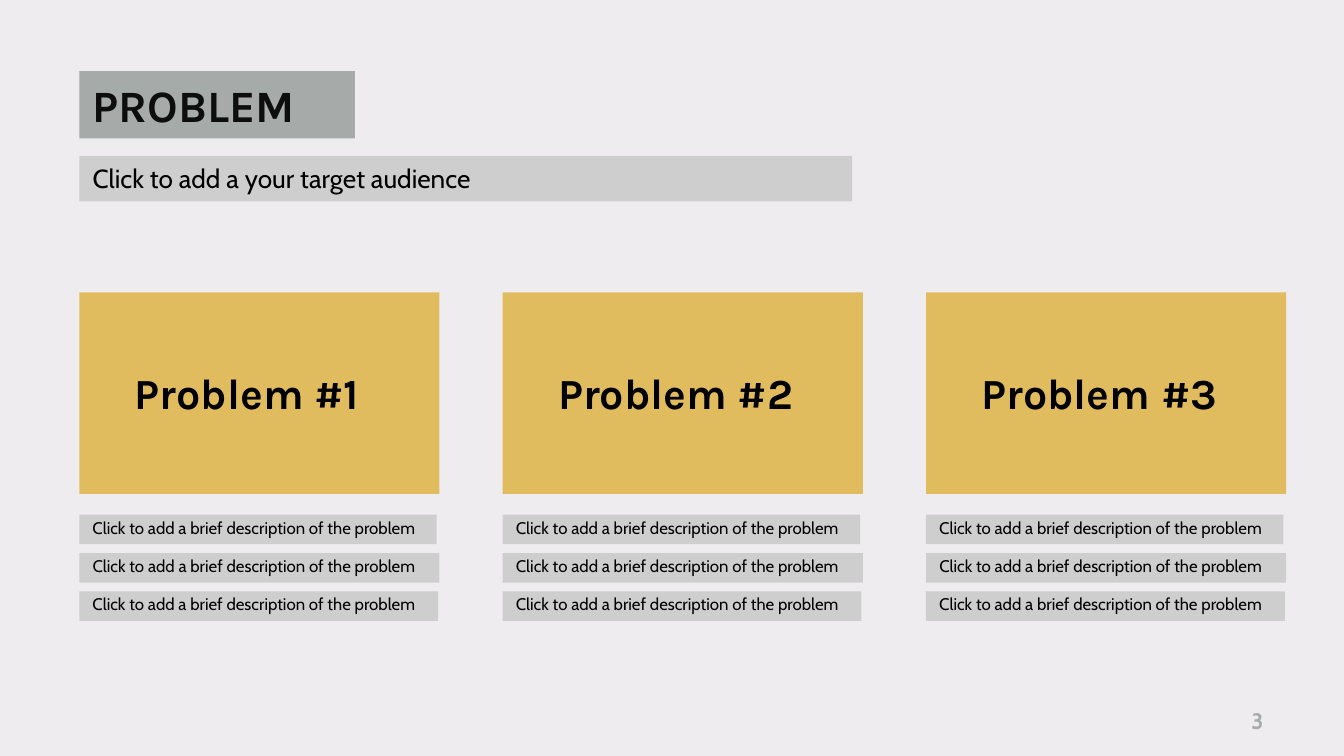
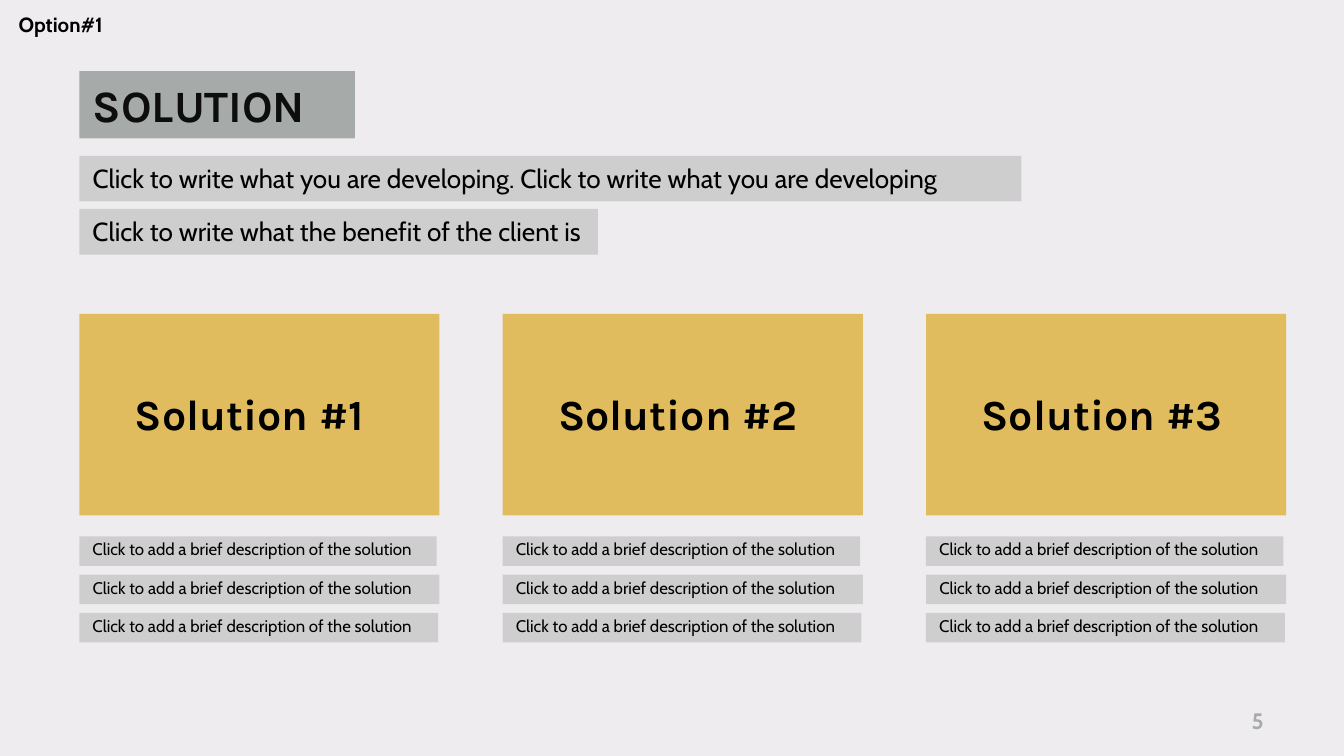
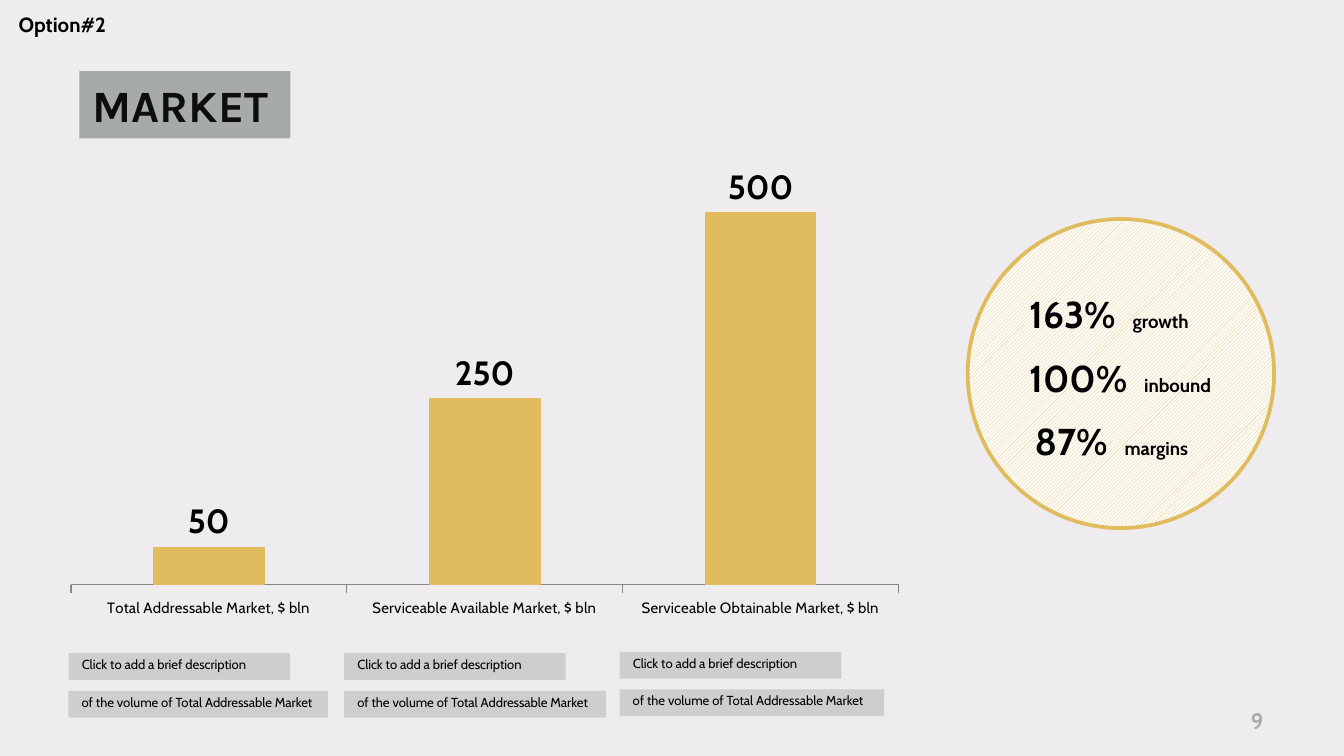
from lxml import etree
from pptx import Presentation
from pptx.chart.data import CategoryChartData
from pptx.dml.color import RGBColor
from pptx.enum.chart import XL_CHART_TYPE, XL_LABEL_POSITION, XL_TICK_MARK
from pptx.enum.dml import MSO_PATTERN
from pptx.enum.shapes import MSO_SHAPE
from pptx.enum.text import MSO_ANCHOR, MSO_AUTO_SIZE, PP_ALIGN
from pptx.oxml.ns import qn
from pptx.util import Inches, Pt

RECT, OVAL = MSO_SHAPE.RECTANGLE, MSO_SHAPE.OVAL
TOP, MIDDLE = MSO_ANCHOR.TOP, MSO_ANCHOR.MIDDLE
LEFT, RIGHT = PP_ALIGN.LEFT, PP_ALIGN.RIGHT
GROW, FIXED = MSO_AUTO_SIZE.SHAPE_TO_FIT_TEXT, MSO_AUTO_SIZE.NONE
COLUMN = XL_CHART_TYPE.COLUMN_CLUSTERED
OUTSIDE_END = XL_LABEL_POSITION.OUTSIDE_END
TICK_OUT, TICK_NONE = XL_TICK_MARK.OUTSIDE, XL_TICK_MARK.NONE
UP_DIAGONAL = MSO_PATTERN.DARK_UPWARD_DIAGONAL

WIDTH = Inches(10)
HEIGHT = WIDTH * 9 // 16
CELL = WIDTH // 100
HEAD_FONT, BODY_FONT = "Karla", "Cabin"
PAPER, STONE, BAND, GOLD = "EFECEF", "A6AAA9", "CFCECF", "E1BC5F"
BLACK, INK, WHITE, AXIS = "000000", "0D0D0D", "FFFFFF", "878787"
MARGIN = 5.9


def rgb(value):
    return RGBColor.from_string(value)


def cells(*lengths):
    return [round(n * CELL) for n in lengths]


def set_font(font, size, color=BLACK, name=BODY_FONT, bold=False):
    font.name, font.size, font.bold = name, Pt(size), bold
    font.color.rgb = rgb(color)


def write(sp, text, size, color=BLACK, name=BODY_FONT, bold=False,
          align=LEFT, anchor=TOP, fit=GROW, spacing=None):
    tf = sp.text_frame
    tf.word_wrap, tf.auto_size, tf.vertical_anchor = True, fit, anchor
    p = tf.paragraphs[0]
    p.text, p.alignment, p.line_spacing = text, align, spacing
    set_font(p.font, size, color, name, bold)
    return p


def block(s, box, color, kind=RECT):
    sp = s.shapes.add_shape(kind, *cells(*box))
    sp.shadow.inherit = False
    sp.fill.solid()
    sp.fill.fore_color.rgb = rgb(color)
    sp.line.fill.background()
    return sp


def label(s, box, text, size, **style):
    return write(s.shapes.add_textbox(*cells(*box)), text, size, **style)


def band(s, box, text, size, spacing=None):
    write(block(s, box, BAND), text, size, spacing=spacing)


def add_slide(prs, title, title_width, number, option=None):
    s = prs.slides.add_slide(prs.slide_layouts[5])
    sp = s.shapes.title
    sp.left, sp.top, sp.width, sp.height = cells(MARGIN, 5.3, title_width, 5)
    sp.fill.solid()
    sp.fill.fore_color.rgb = rgb(STONE)
    write(sp, title, 24, INK, HEAD_FONT, True, fit=FIXED)
    label(s, (71.7, 52.1, 23.3, 3), number, 12, color=STONE, bold=True,
          align=RIGHT, anchor=MIDDLE, fit=FIXED)
    if option:
        label(s, (0.4, 0.4, 9.4, 2.9), option, 11, bold=True)
    return s


def card(s, left, top, heading, description):
    block(s, (left, top, 26.8, 15), GOLD)
    label(s, (left + 3.15, top + 5, 21.3, 4.9), heading, 23,
          name=HEAD_FONT, bold=True)
    for row, width in enumerate((26.6, 26.8, 26.7)):
        band(s, (left, top + 16.55 + 2.85 * row, width, 2.2), description, 9, 0.8)


def card_slide(prs, title, number, topic, intro, top, option=None):
    s = add_slide(prs, title, 20.5, number, option)
    for row, (text, width) in enumerate(intro):
        band(s, (MARGIN, 11.6 + 3.95 * row, width, 3.4), text, 14)
    for i in range(3):
        card(s, MARGIN + 31.5 * i, top, f"{topic} #{i + 1}",
             f"Click to add a brief description of the {topic.lower()}")


def place_plot(chart, **shares):
    area = chart.element.find(".//" + qn("c:plotArea"))
    layout = area.find(qn("c:layout"))
    if layout is None:
        layout = etree.Element(qn("c:layout"))
        area.insert(0, layout)
    manual = etree.SubElement(layout, qn("c:manualLayout"))
    settings = {"layoutTarget": "inner", "xMode": "edge", "yMode": "edge", **shares}
    for tag, value in settings.items():
        etree.SubElement(manual, qn(f"c:{tag}")).set("val", str(value))


def market_chart(s, box):
    data = CategoryChartData()
    data.categories = [f"{kind} Market, $ bln" for kind in
                       ("Total Addressable", "Serviceable Available",
                        "Serviceable Obtainable")]
    data.add_series("Series 1", (50, 250, 500))
    chart = s.shapes.add_chart(COLUMN, *cells(*box), data).chart
    chart.has_legend = chart.has_title = False
    set_font(chart.font, 10.5)
    place_plot(chart, x=0.02, y=0, w=0.97, h=0.9)

    values = chart.value_axis
    values.minimum_scale, values.maximum_scale = 0, 600
    values.has_major_gridlines = values.visible = False
    categories = chart.category_axis
    categories.major_tick_mark, categories.minor_tick_mark = TICK_OUT, TICK_NONE
    categories.format.line.color.rgb = rgb(AXIS)
    set_font(categories.tick_labels.font, 8)

    plot = chart.plots[0]
    plot.gap_width, plot.vary_by_categories = 150, False
    bars = plot.series[0].format
    bars.fill.solid()
    bars.fill.fore_color.rgb = rgb(GOLD)
    bars.line.color.rgb = rgb(GOLD)
    bars.line.width = Pt(0.75)
    plot.has_data_labels = True
    labels = plot.data_labels
    labels.show_value, labels.position = True, OUTSIDE_END
    set_font(labels.font, 18, bold=True)


def market_note(s, left, top, width):
    band(s, (left, top, 16.5, 2), "Click to add a brief description", 7, 0.8)
    band(s, (left, top + 2.8, width, 2),
         "of the volume of Total Addressable Market", 7, 0.8)


def metric(s, left, top, value, name):
    p = label(s, (left, top, 15.7, 3.7), value, 20, bold=True, spacing=0.8)
    gap = p.add_run()
    gap.text = " "
    gap.font._element.set("spc", "450")
    r = p.add_run()
    r.text = name
    r.font.size = Pt(10)


def metrics_circle(s, left, top):
    sp = block(s, (left, top, 22.8, 23), WHITE, OVAL)
    sp.fill.patterned()
    sp.fill.pattern = UP_DIAGONAL
    sp.fill.fore_color.rgb = rgb(GOLD)
    sp.fill.back_color.rgb = rgb(WHITE)
    sp.line.color.rgb = rgb(GOLD)
    sp.line.width = Pt(2)
    metrics = (("163%", "growth", 3.6), ("100%", "inbound", 3.6),
               ("87%", "margins", 4))
    for row, (value, name, indent) in enumerate(metrics):
        metric(s, left + indent, top + 5.5 + 4.75 * row, value, name)


def market_slide(prs):
    s = add_slide(prs, "MARKET", 15.7, "9", "Option#2")
    market_chart(s, (4, 10.3, 63.5, 36.9))
    for i, (top, width) in enumerate(((48.6, 19.3), (48.6, 19.5), (48.5, 19.7))):
        market_note(s, 5.1 + 20.5 * i, top, width)
    metrics_circle(s, 72, 16.3)


def main():
    prs = Presentation()
    prs.slide_width, prs.slide_height = WIDTH, HEIGHT
    fill = prs.slide_master.background.fill
    fill.solid()
    fill.fore_color.rgb = rgb(PAPER)
    card_slide(prs, "PROBLEM", "3", "Problem",
               [("Click to add a your target audience", 57.5)], 21.75)
    developing = "Click to write what you are developing"
    card_slide(prs, "SOLUTION", "5", "Solution",
               [(f"{developing}. {developing}", 70.1),
                ("Click to write what the benefit of the client is", 38.6)],
               23.35, "Option#1")
    market_slide(prs)
    prs.save("out.pptx")


if __name__ == "__main__":
    main()
